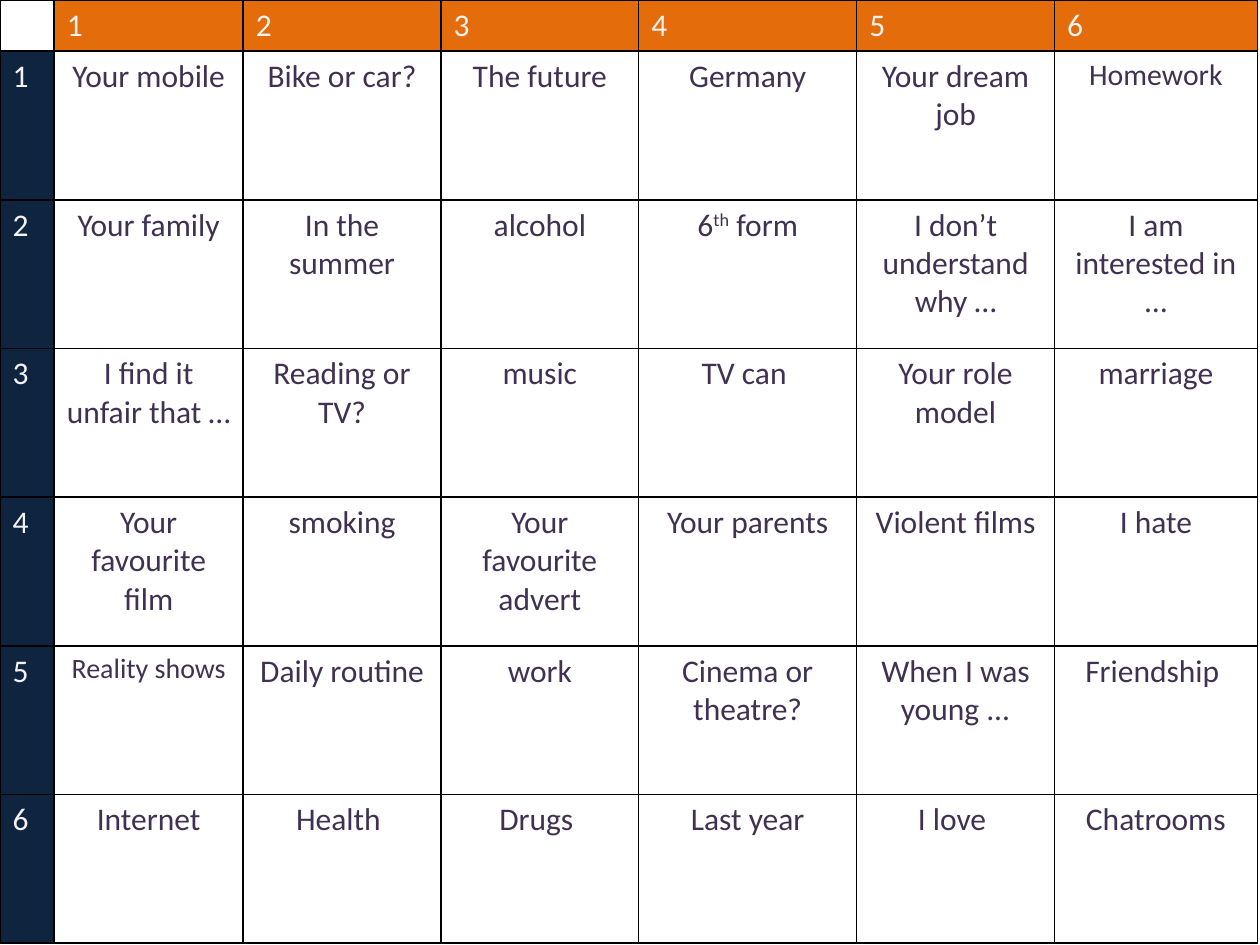
from dataclasses import dataclass

from lxml.etree import SubElement
from pptx import Presentation
from pptx.dml.color import RGBColor as RGB
from pptx.enum.text import PP_ALIGN as Align
from pptx.oxml.ns import qn
from pptx.util import Inches, Pt


@dataclass(frozen=True)
class Theme:
    font: str = "Calibri"
    header_fill: str = "E46C0A"
    side_fill: str = "0F243E"
    label: str = "F2F2F2"
    topic: str = "403152"
    border: str = "000000"
    border_width: float = 1
    size: float = 18


THEME = Theme()
COL_WIDTHS = [0.43, 1.5, 1.57, 1.57, 1.73, 1.57, 1.61]
HEADER_HEIGHT, TOPIC_HEIGHT = 0.36, 1.18
TOPICS = [
    ["Your mobile", "Bike or car?", "The future", "Germany",
     "Your dream job", "Homework"],
    ["Your family", "In the summer", "alcohol", "6^th^ form",
     "I don’t understand why …", "I am interested in …"],
    ["I find it unfair that …", "Reading or TV?", "music", "TV can ",
     "Your role model", "marriage"],
    ["Your favourite film", "smoking", "Your favourite advert",
     "Your parents", "Violent films", "I hate"],
    ["Reality shows", "Daily routine", "work", "Cinema or theatre?",
     "When I was young ...", "Friendship "],
    ["Internet", "Health ", "Drugs ", "Last year", "I love ", "Chatrooms"],
]
SMALLER_TOPICS = {"Homework": 17, "Reality shows": 16}


def write_text(tf, text, color, size=THEME.size, align=Align.LEFT):
    """Write one paragraph; text between carets is superscript."""
    p = tf.paragraphs[0]
    p.alignment = align
    for i, part in enumerate(text.split("^")):
        r = p.add_run()
        r.text = part
        r.font.name = THEME.font
        r.font.size = Pt(size)
        r.font.color.rgb = RGB.from_string(color)
        if i % 2:
            r._r.get_or_add_rPr().set("baseline", "30000")


def set_borders(cell):
    tc_pr = cell._tc.get_or_add_tcPr()
    for side in ("a:lnL", "a:lnR", "a:lnT", "a:lnB"):
        ln = SubElement(tc_pr, qn(side), w=str(Pt(THEME.border_width)))
        fill = SubElement(ln, qn("a:solidFill"))
        SubElement(fill, qn("a:srgbClr"), val=THEME.border)


def fill_cell(cell, color=None):
    if color:
        cell.fill.solid()
        cell.fill.fore_color.rgb = RGB.from_string(color)
    else:
        cell.fill.background()


def add_grid(s):
    heights = [HEADER_HEIGHT] + [TOPIC_HEIGHT] * len(TOPICS)
    table = s.shapes.add_table(
        len(heights), len(COL_WIDTHS), 0, 0,
        Inches(sum(COL_WIDTHS)), Inches(sum(heights))).table
    table.first_row = table.horz_banding = False
    for col, width in zip(table.columns, COL_WIDTHS):
        col.width = Inches(width)
    for row, height in zip(table.rows, heights):
        row.height = Inches(height)
    return table


def fill_grid(table):
    for i, row in enumerate(table.rows):
        for j, cell in enumerate(row.cells):
            set_borders(cell)
            tf = cell.text_frame
            if i and j:
                topic = TOPICS[i - 1][j - 1]
                fill_cell(cell)
                write_text(tf, topic, THEME.topic, align=Align.CENTER,
                           size=SMALLER_TOPICS.get(topic, THEME.size))
            elif i or j:
                fill_cell(cell, THEME.side_fill if i else THEME.header_fill)
                write_text(tf, str(i or j), THEME.label)
            else:
                fill_cell(cell)


def main():
    prs = Presentation()
    prs.slide_width, prs.slide_height = Inches(10), Inches(7.5)
    s = prs.slides.add_slide(prs.slide_layouts[6])
    fill_grid(add_grid(s))
    prs.save("out.pptx")


if __name__ == "__main__":
    main()
